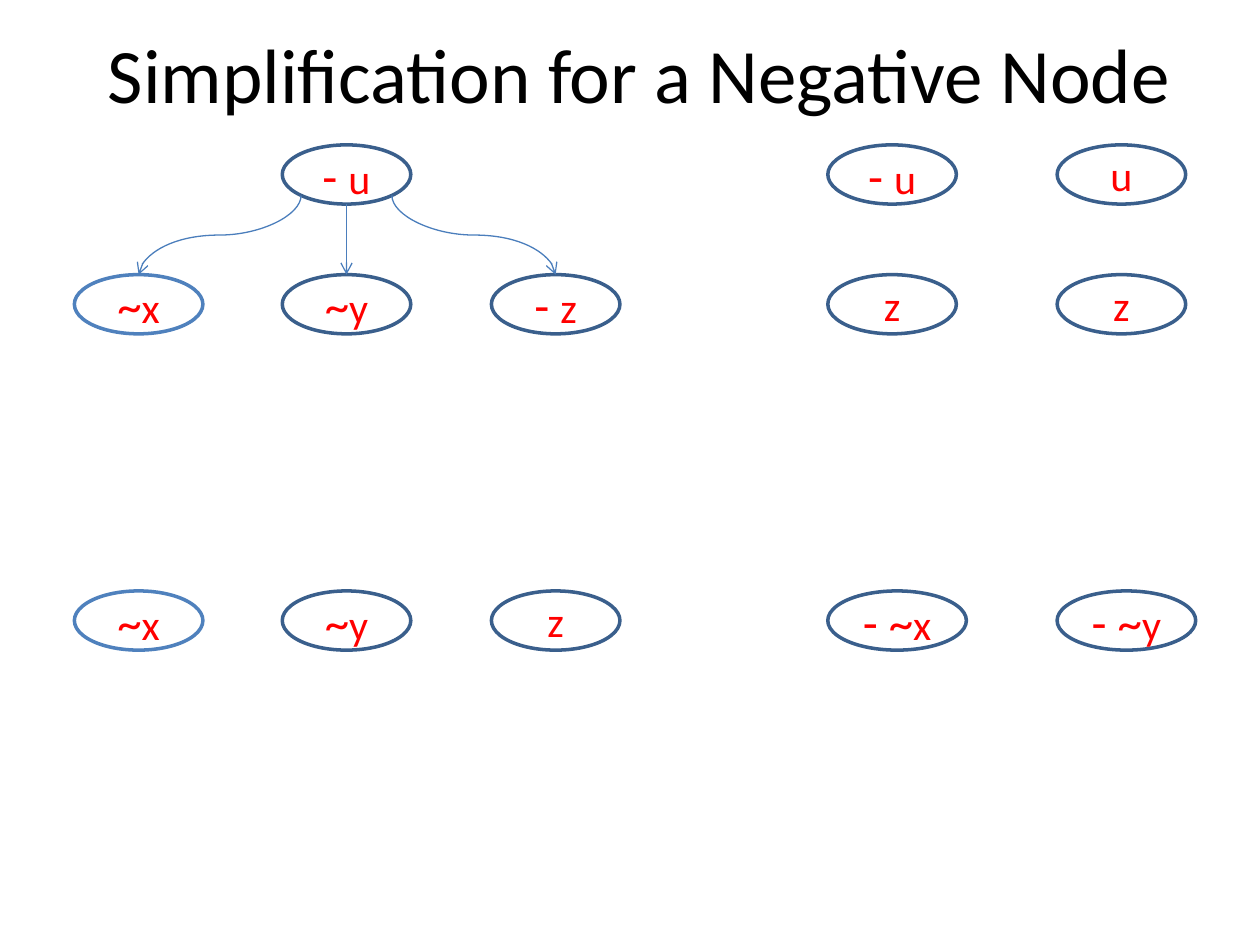
from dataclasses import dataclass
from math import sqrt

from lxml.etree import SubElement
from pptx import Presentation
from pptx.dml.color import RGBColor
from pptx.enum.shapes import MSO_CONNECTOR, MSO_SHAPE
from pptx.enum.text import MSO_ANCHOR, PP_ALIGN
from pptx.oxml.ns import qn
from pptx.util import Inches, Pt

FONT = "Calibri"
DARK_BLUE = "3A5F8C"
LIGHT_BLUE = "4F81BD"
ARROW_BLUE = "4B7EBC"
RED = "FF0000"
NODE_HEIGHT = 0.47
LEFT, MIDDLE, RIGHT, FAR, LAST = 0.59, 2.24, 3.9, 6.57, 8.39
TOP_ROW, CHILD_ROW, RESULT_ROW = 1.15, 2.18, 4.69


@dataclass
class Node:
    left: float
    top: float
    sign: str
    letter: str
    width: float = 1.02
    outline: str = DARK_BLUE

    @property
    def center(self) -> float:
        return self.left + self.width / 2

    def lower_point(self, side: int) -> tuple[float, float]:
        if side == 0:
            return self.center, self.top + NODE_HEIGHT
        drop = NODE_HEIGHT / 2
        return (self.center + side * self.width / 2 / sqrt(2),
                self.top + drop + drop / sqrt(2))


PARENT = Node(MIDDLE, TOP_ROW, "- ", "u")
CHILDREN = [
    Node(LEFT, CHILD_ROW, "~", "x", outline=LIGHT_BLUE),
    Node(MIDDLE, CHILD_ROW, "~", "y"),
    Node(RIGHT, CHILD_ROW, "- ", "z"),
]
CLAUSES = [
    Node(FAR, TOP_ROW, "- ", "u"),
    Node(LAST, TOP_ROW, "", "u"),
    Node(FAR, CHILD_ROW, "", "z"),
    Node(LAST, CHILD_ROW, "", "z"),
    Node(LEFT, RESULT_ROW, "~", "x", outline=LIGHT_BLUE),
    Node(MIDDLE, RESULT_ROW, "~", "y"),
    Node(RIGHT, RESULT_ROW, "", "z"),
    Node(FAR, RESULT_ROW, "- ~", "x", width=1.1),
    Node(LAST, RESULT_ROW, "- ~", "y", width=1.1),
]


def color(value: str) -> RGBColor:
    return RGBColor.from_string(value)


def add_span(para, text: str, size: int, shade: str) -> None:
    span = para.add_run()
    span.text = text
    span.font.name = FONT
    span.font.size = Pt(size)
    span.font.color.rgb = color(shade)


def draw_node(page, node: Node) -> None:
    oval = page.shapes.add_shape(
        MSO_SHAPE.OVAL, Inches(node.left), Inches(node.top),
        Inches(node.width), Inches(NODE_HEIGHT))
    oval.shadow.inherit = False
    oval.fill.solid()
    oval.fill.fore_color.rgb = color("FFFFFF")
    oval.line.color.rgb = color(node.outline)
    oval.line.width = Pt(2)
    frame = oval.text_frame
    frame.word_wrap = False
    frame.vertical_anchor = MSO_ANCHOR.MIDDLE
    para = frame.paragraphs[0]
    para.alignment = PP_ALIGN.CENTER
    if node.sign:
        add_span(para, node.sign, 28, RED)
    add_span(para, node.letter, 24, RED)


def draw_arrow(page, parent: Node, child: Node, side: int) -> None:
    start_x, start_y = parent.lower_point(side)
    end_x, end_y = child.center, child.top
    middle_x, middle_y = (start_x + end_x) / 2, (start_y + end_y) / 2
    half_length = (end_y - start_y) / 2
    half_spread = abs(end_x - start_x) / 2
    direction = -1 if side > 0 else 1
    arrow = page.shapes.add_connector(
        MSO_CONNECTOR.CURVE,
        Inches(middle_x - direction * half_length), Inches(middle_y - half_spread),
        Inches(middle_x + direction * half_length), Inches(middle_y + half_spread))
    arrow.line.color.rgb = color(ARROW_BLUE)
    arrow.line.width = Pt(0.75)
    properties = arrow._element.spPr
    turn = 270 if side > 0 else 90
    properties.find(qn("a:xfrm")).set("rot", str(turn * 60000))
    SubElement(properties.find(qn("a:ln")), qn("a:tailEnd"), type="arrow")
    SubElement(properties, qn("a:effectLst"))


def draw_title(page, text: str) -> None:
    title = page.shapes.title
    title.left, title.top = Inches(0.5), Inches(0)
    title.width, title.height = Inches(9.15), Inches(1.15)
    title.text_frame.vertical_anchor = MSO_ANCHOR.MIDDLE
    para = title.text_frame.paragraphs[0]
    para.alignment = PP_ALIGN.CENTER
    add_span(para, text, 44, "000000")


def main() -> None:
    deck = Presentation()
    deck.slide_width, deck.slide_height = Inches(10), Inches(7.5)
    page = deck.slides.add_slide(deck.slide_layouts[5])
    draw_title(page, "Simplification for a Negative Node")
    for node in [PARENT, *CHILDREN, *CLAUSES]:
        draw_node(page, node)
    for child, side in zip(CHILDREN, (-1, 0, 1)):
        draw_arrow(page, PARENT, child, side)
    deck.save("out.pptx")


if __name__ == "__main__":
    main()
